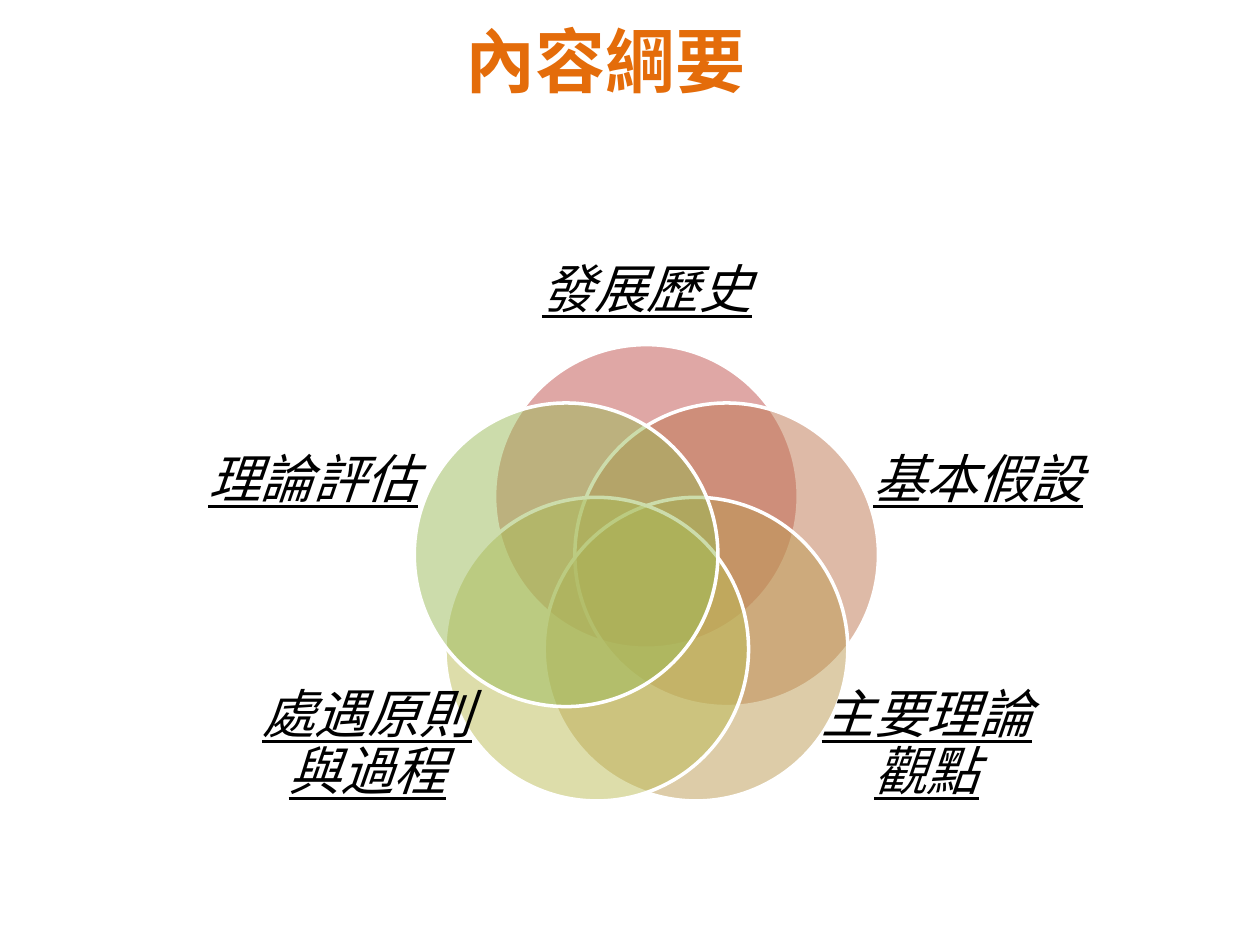
"""Build the outline slide: a title above five overlapping circles with labels."""
import math
from dataclasses import dataclass

from lxml import etree
from pptx import Presentation, util as u
from pptx.dml.color import RGBColor
from pptx.enum import shapes, text
from pptx.oxml.ns import qn

TITLE = "內容綱要"
TITLE_BOX = (1.72, 0.09, 6.17, 0.77)
TOPICS = [
    ("發展歷史", "C0504D", (4.16, 1.75, 1.95, 1.13)),
    ("基本假設", "BF7750", (6.89, 3.21, 1.75, 1.23)),
    ("主要理論觀點", "BD9B53", (6.48, 5.3, 1.75, 1.23)),
    ("處遇原則與過程", "BCBC56", (2.04, 5.3, 1.75, 1.23)),
    ("理論評估", "9BBB59", (1.61, 3.21, 1.75, 1.23)),
]
SLIDE_SIZE = (10, 7.5)
RING_CENTER = (5.13, 4.61)
RING_RADIUS = 0.67
DIAMETER = 2.41


@dataclass(frozen=True)
class Theme:
    font: str = "Noto Sans CJK SC"
    title_color: str = "E46C0A"
    label_color: str = "000000"
    outline_color: str = "FFFFFF"
    title_size: int = 40
    label_size: int = 30
    outline_width: int = 2
    opacity: int = 50


THEME = Theme()


def inches(box):
    return [u.Inches(length) for length in box]


def add_text(container, box, words, size, color):
    shape = container.add_textbox(*inches(box))
    frame = shape.text_frame
    frame.word_wrap = True
    paragraph = frame.paragraphs[0]
    paragraph.alignment = text.PP_ALIGN.CENTER
    run = paragraph.add_run()
    run.text = words
    run.font.size = u.Pt(size)
    run.font.name = THEME.font
    run.font.color.rgb = RGBColor.from_string(color)
    etree.SubElement(run.font._element, qn("a:ea"), typeface=THEME.font)
    return frame, paragraph, run


def add_circle(container, index, color):
    angle = index * math.tau / len(TOPICS)
    left = RING_CENTER[0] + RING_RADIUS * math.sin(angle) - DIAMETER / 2
    top = RING_CENTER[1] - RING_RADIUS * math.cos(angle) - DIAMETER / 2
    circle = container.add_shape(
        shapes.MSO_SHAPE.OVAL, *inches((left, top, DIAMETER, DIAMETER)))
    circle.shadow.inherit = False
    circle.fill.solid()
    circle.fill.fore_color.rgb = RGBColor.from_string(color)
    fill_color = circle._element.spPr.find(qn("a:solidFill"))[0]
    etree.SubElement(fill_color, qn("a:alpha"), val=str(THEME.opacity * 1000))
    circle.line.color.rgb = RGBColor.from_string(THEME.outline_color)
    circle.line.width = u.Pt(THEME.outline_width)


def add_label(container, words, box):
    frame, paragraph, run = add_text(
        container, box, words, THEME.label_size, THEME.label_color)
    frame.margin_left = frame.margin_right = 0
    frame.margin_top = frame.margin_bottom = 0
    frame.vertical_anchor = text.MSO_ANCHOR.MIDDLE
    paragraph.line_spacing = 0.9
    run.font.italic = True
    run.font.underline = True


def main():
    presentation = Presentation()
    presentation.slide_width, presentation.slide_height = inches(SLIDE_SIZE)
    slide = presentation.slides.add_slide(presentation.slide_layouts[6])
    diagram = slide.shapes.add_group_shape()
    for index, (words, color, box) in enumerate(TOPICS):
        add_circle(diagram.shapes, index, color)
        add_label(diagram.shapes, words, box)
    frame, _, run = add_text(
        slide.shapes, TITLE_BOX, TITLE, THEME.title_size, THEME.title_color)
    frame.auto_size = text.MSO_AUTO_SIZE.SHAPE_TO_FIT_TEXT
    run.font.bold = True
    presentation.save("out.pptx")


if __name__ == "__main__":
    main()
